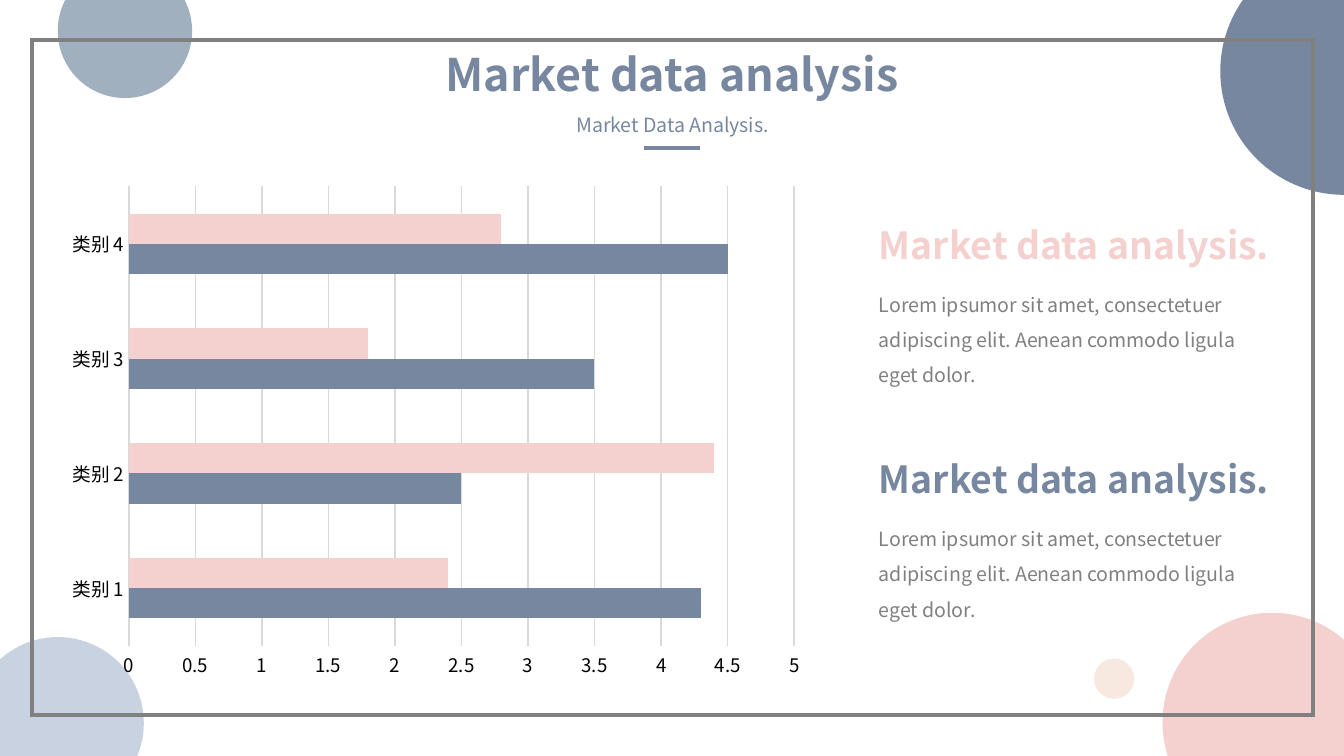
from lxml import etree
from pptx import Presentation
from pptx.chart.data import CategoryChartData
from pptx.dml.color import RGBColor
from pptx.enum.chart import XL_CHART_TYPE as CHART, XL_TICK_MARK as TICK
from pptx.enum.shapes import MSO_CONNECTOR as LINE, MSO_SHAPE as SHAPE
from pptx.enum.text import MSO_ANCHOR as ANCHOR, MSO_AUTO_SIZE as AUTO, PP_ALIGN as ALIGN
from pptx.oxml.ns import qn
from pptx.util import Inches, Pt

FONT = "Noto Sans CJK SC"
BLUE, PINK, GREY, PALE = "7787A0", "F4D1CF", "808080", "D9D9D9"
COMPARISON = 4  # layout with a title and two pairs of heading and body
LOREM = ("Lorem ipsumor sit amet, consectetuer adipiscing elit. "
         "Aenean commodo ligula eget dolor.")


def rgb(value):
    return RGBColor.from_string(value)


class Deck:
    """Style and current slide; lengths are cells of a grid 100 columns wide."""

    def __init__(self, width=10):
        self.prs = Presentation()
        self.prs.slide_width = Inches(width)
        self.prs.slide_height = Inches(width * 9 / 16)
        self.cell = Inches(width) / 100
        self.slide = self.prs.slides.add_slide(self.prs.slide_layouts[COMPARISON])
        self.shapes = self.slide.shapes

    def grid(self, *cells):
        return [round(n * self.cell) for n in cells]

    def font(self, font, size, color, bold=False):
        font.name, font.size, font.bold = FONT, Pt(size), bold
        font.color.rgb = rgb(color)

    def shape(self, kind, box, fill=None, line=None):
        s = self.shapes.add_shape(kind, *self.grid(*box))
        s.shadow.inherit = False
        if fill:
            s.fill.solid()
            s.fill.fore_color.rgb = rgb(fill)
        else:
            s.fill.background()
        if line:
            s.line.color.rgb, s.line.width = rgb(line), Pt(2.25)
            # Sharp corners
            etree.SubElement(s.line._get_or_add_ln(), qn("a:miter"), lim="800000")
        else:
            s.line.fill.background()

    def circle(self, left, top, size, fill):
        self.shape(SHAPE.OVAL, (left, top, size, size), fill)

    def rule(self, x1, y1, x2, y2, color):
        s = self.shapes.add_connector(LINE.STRAIGHT, *self.grid(x1, y1, x2, y2))
        s.line.color.rgb, s.line.width = rgb(color), Pt(2.25)
        etree.SubElement(s._element.spPr, qn("a:effectLst"))

    def text(self, sp, box, text, size, color, bold=False, align=ALIGN.LEFT, spacing=1):
        sp.left, sp.top, sp.width, sp.height = self.grid(*box)
        tf = sp.text_frame
        tf.word_wrap, tf.auto_size, tf.vertical_anchor = True, AUTO.NONE, ANCHOR.TOP
        p = tf.paragraphs[0]
        p.alignment, p.line_spacing, p.space_before = align, spacing, Pt(0)
        # No bullet and no hanging indent
        pPr = p._p.get_or_add_pPr()
        pPr.set("marL", "0")
        pPr.set("indent", "0")
        etree.SubElement(pPr, qn("a:buNone"))
        r = p.add_run()
        r.text = text
        self.font(r.font, size, color, bold)

    def placeholder(self, idx, *args, **style):
        self.text(self.slide.placeholders[idx], *args, **style)

    def textbox(self, box, *args, **style):
        self.text(self.shapes.add_textbox(*self.grid(*box)), box, *args, **style)

    def bar_chart(self, box, categories, series):
        data = CategoryChartData()
        data.categories = categories
        for name, values, _ in series:
            data.add_series(name, values)
        chart = self.shapes.add_chart(CHART.BAR_CLUSTERED, *self.grid(*box), data).chart
        chart.has_legend = chart.has_title = False
        self.font(chart.font, 10, "000000")
        # East Asian face for the category names
        latin = chart.font._element.find(qn("a:latin"))
        latin.addnext(latin.makeelement(qn("a:ea"), {"typeface": FONT}))
        plot = chart.plots[0]
        plot.gap_width, plot.overlap, plot.vary_by_categories = 182, 0, False
        for s, (_, _, color) in zip(plot.series, series):
            s.format.fill.solid()
            s.format.fill.fore_color.rgb = rgb(color)
        cat, val = chart.category_axis, chart.value_axis
        for axis in (cat, val):
            axis.major_tick_mark = axis.minor_tick_mark = TICK.NONE
        val.minimum_scale, val.maximum_scale, val.major_unit = 0, 5, 0.5
        val.has_major_gridlines = True
        val.format.line.fill.background()
        for line in (cat.format.line, val.major_gridlines.format.line):
            line.color.rgb, line.width = rgb(PALE), Pt(0.75)


def main():
    deck = Deck()

    # Corner circles and frame
    for circle in ((90.8, -3.9, 18.4, BLUE), (86.5, 45.6, 16.3, PINK),
                   (4.3, -2.7, 10, "A0B0BF"), (-2.1, 47.4, 12.8, "C9D2E1"),
                   (81.4, 49, 3, "F7E9E0")):
        deck.circle(*circle)
    deck.shape(SHAPE.RECTANGLE, (2.4, 3, 95.3, 50.2), line=GREY)

    # Title, subtitle and rule
    deck.placeholder(0, (30.5, 3, 39, 5), "Market data analysis", 24, BLUE,
                     bold=True, align=ALIGN.CENTER)
    deck.textbox((40.3, 7.9, 19.5, 2.8), "Market Data Analysis.", 10.5, BLUE,
                 align=ALIGN.CENTER)
    deck.rule(47.9, 11, 52.1, 11, BLUE)

    # Chart
    deck.bar_chart((4.3, 13.1, 56.3, 38.1), [f"类别 {n}" for n in range(1, 5)],
                   [("Series 1", (4.3, 2.5, 3.5, 4.5), BLUE),
                    ("Series 2", (2.4, 4.4, 1.8, 2.8), PINK)])

    # Heading and body pairs
    for i, color in enumerate((PINK, BLUE)):
        top = 16 + 17.45 * i
        deck.placeholder(1 + 2 * i, (64.4, top, 33.5, 4.4), "Market data analysis.",
                         20, color, bold=True)
        deck.placeholder(2 + 2 * i, (64.4, top + 4.4, 30.4, 9), LOREM, 10.5, GREY,
                         spacing=1.5)

    deck.prs.save("out.pptx")


if __name__ == "__main__":
    main()
